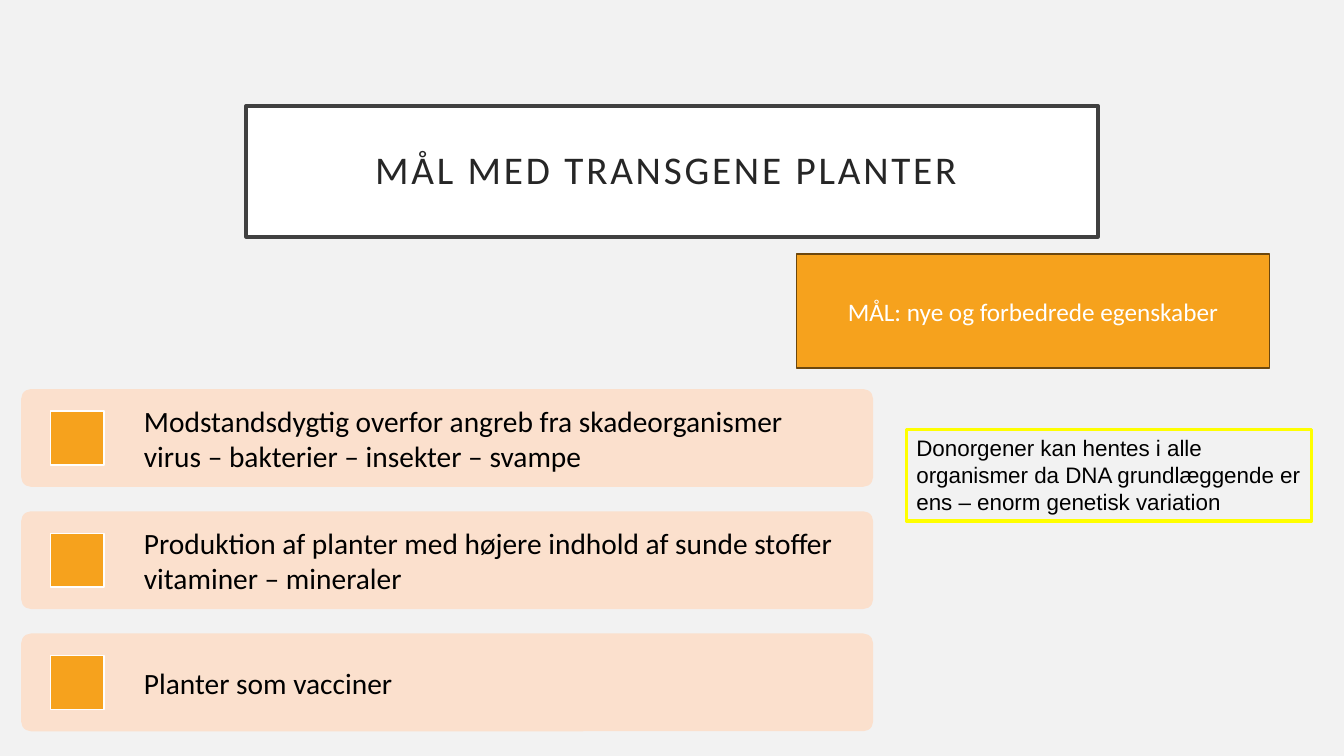
import pptx
import pptx.util
import pptx.dml.color
import pptx.enum.shapes
import pptx.enum.text

TITLE = "MÅL MED TRANSGENE PLANTER "
GOAL = "MÅL: nye og forbedrede egenskaber"
DONOR = ("Donorgener kan hentes i alle organismer da DNA grundlæggende er "
         "ens – enorm genetisk variation")
# \v is a line break inside a paragraph
AIMS = [
    "Modstandsdygtig overfor angreb fra skadeorganismer\vvirus – bakterier – insekter – svampe",
    "Produktion af planter med højere indhold af sunde stoffer\vvitaminer – mineraler",
    "Planter som vacciner",
]
COLORS = {"bg": "F2F2F2", "white": "FFFFFF", "frame": "404040", "title": "262626",
          "card": "FBE0CD", "orange": "F6A21D", "brown": "6C470D",
          "yellow": "FFFF00", "black": "000000"}

WIDTH, HEIGHT = 13.33, 7.5
CARD_LEFT, CARD_TOP, CARD_W, CARD_H = 0.21, 3.86, 8.45, 0.97
PITCH = CARD_H * 1.25
ICON = CARD_H * 0.55
ICON_INDENT, TEXT_INDENT = 0.29, 1.12

SHAPE = pptx.enum.shapes.MSO_SHAPE
ALIGN = pptx.enum.text.PP_ALIGN
ANCHOR = pptx.enum.text.MSO_ANCHOR
AUTO = pptx.enum.text.MSO_AUTO_SIZE
Inches, Pt = pptx.util.Inches, pptx.util.Pt


def rgb(name):
    return pptx.dml.color.RGBColor.from_string(COLORS[name])


def paint(shape, fill=None, line=None, weight=1):
    if fill:
        shape.fill.solid()
        shape.fill.fore_color.rgb = rgb(fill)
    else:
        shape.fill.background()
    if line:
        shape.line.color.rgb = rgb(line)
        shape.line.width = Pt(weight)
    else:
        shape.line.fill.background()


def add_box(s, kind, box, **look):
    shape = s.shapes.add_shape(kind, *map(Inches, box))
    shape.shadow.inherit = False
    paint(shape, **look)
    return shape


def write(shape, text, size, color, font="Calibri", align=ALIGN.LEFT, inset=(0.1, 0.05),
          anchor=ANCHOR.MIDDLE, spacing=1.0, tracking=None):
    tf = shape.text_frame
    tf.word_wrap = True
    tf.auto_size = AUTO.NONE
    tf.vertical_anchor = anchor
    tf.margin_left = tf.margin_right = Inches(inset[0])
    tf.margin_top = tf.margin_bottom = Inches(inset[1])
    p = tf.paragraphs[0]
    p.text = text
    p.alignment = align
    p.line_spacing = spacing
    for r in p.runs:
        r.font.name = font
        r.font.size = Pt(size)
        r.font.color.rgb = rgb(color)
        if tracking:
            r.font._element.set("spc", str(tracking * 100))


prs = pptx.Presentation()
prs.slide_width, prs.slide_height = Inches(WIDTH), Inches(HEIGHT)
s = prs.slides.add_slide(prs.slide_layouts[5])
s.background.fill.solid()
s.background.fill.fore_color.rgb = rgb("bg")

title = s.shapes.title
title.left, title.top, title.width, title.height = map(Inches, (2.44, 1.05, 8.45, 1.3))
paint(title, fill="white", line="frame", weight=2.5)
write(title, TITLE, 28, "title", align=ALIGN.CENTER, inset=(0.2, 0.2), spacing=0.9, tracking=2)

for i, aim in enumerate(AIMS):
    top = CARD_TOP + i * PITCH
    card = add_box(s, SHAPE.ROUNDED_RECTANGLE, (CARD_LEFT, top, CARD_W, CARD_H), fill="card")
    card.adjustments[0] = 0.1
    add_box(s, SHAPE.RECTANGLE,
            (CARD_LEFT + ICON_INDENT, top + (CARD_H - ICON) / 2, ICON, ICON),
            fill="orange", line="white")
    label = s.shapes.add_textbox(*map(Inches, (CARD_LEFT + TEXT_INDENT, top,
                                               CARD_W - TEXT_INDENT, CARD_H)))
    write(label, aim, 21, "black", inset=(0.1, 0.1))

goal = add_box(s, SHAPE.RECTANGLE, (7.9, 2.52, 4.69, 1.13), fill="orange", line="brown")
write(goal, GOAL, 18, "white", align=ALIGN.CENTER)

donor = add_box(s, SHAPE.RECTANGLE, (8.99, 4.26, 4.02, 0.91), line="yellow", weight=2.25)
write(donor, DONOR, 16, "black", font="Arial", anchor=ANCHOR.TOP)

prs.save("out.pptx")
